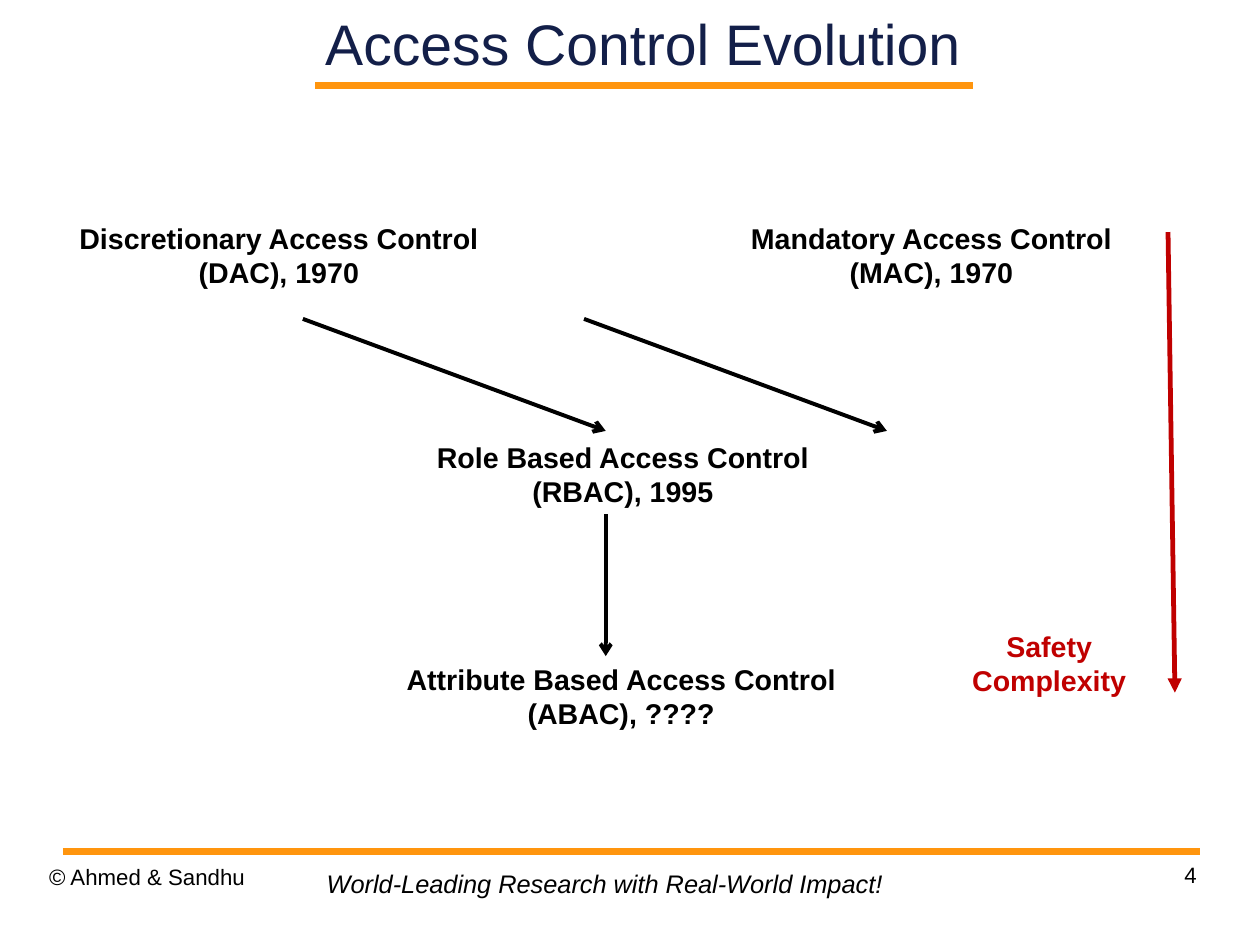
"""Build the slide on the evolution of access control models."""
from lxml.etree import SubElement
from pptx import Presentation
from pptx.dml.color import RGBColor
from pptx.enum.shapes import MSO_CONNECTOR as Connector
from pptx.enum.text import MSO_ANCHOR as Anchor, PP_ALIGN as Align
from pptx.oxml.ns import qn
from pptx.util import Inches, Pt

BLACK, NAVY, ORANGE, RED = "000000", "131F49", "FF950E", "C00000"


def write(box, text, size, color, align, margins=(0, 0), wrap=True, bold=False, italic=False):
    frame = box.text_frame
    frame.text = text
    frame.word_wrap = wrap
    frame.margin_left = frame.margin_right = Inches(margins[0])
    frame.margin_top = frame.margin_bottom = Inches(margins[1])
    for para in frame.paragraphs:
        para.alignment = align
        for span in para.runs:
            span.font.name = "Arial"
            span.font.size = Pt(size)
            span.font.bold = bold
            span.font.italic = italic
            span.font.color.rgb = RGBColor.from_string(color)


def draw_line(start, end, color, width, head=None):
    line = page.shapes.add_connector(Connector.STRAIGHT, *map(Inches, start + end))
    line.line.color.rgb = RGBColor.from_string(color)
    line.line.width = Pt(width)
    if head:
        SubElement(line.line._get_or_add_ln(), qn("a:tailEnd"), type=head)
    SubElement(line._element.spPr, qn("a:effectLst"))


deck = Presentation()
deck.slide_width, deck.slide_height = Pt(793.75), Pt(595.25)
page = deck.slides.add_slide(deck.slide_layouts[5])

title = page.shapes.title
title.left, title.top, title.width, title.height = map(Inches, (2.41, 0, 6.43, 0.75))
write(title, "Access Control Evolution", 36, NAVY, Align.CENTER)
title.text_frame.vertical_anchor = Anchor.MIDDLE

draw_line((2.76, 0.75), (8.51, 0.75), ORANGE, 4.31)
draw_line((0.55, 7.45), (10.5, 7.45), ORANGE, 4.31)

models = [
    ("Discretionary Access Control (DAC), 1970", 0.59, 1.88, 3.7),
    ("Mandatory Access Control (MAC), 1970", 6.3, 1.88, 3.7),
    ("Role Based Access Control (RBAC), 1995", 3.6, 3.8, 3.7),
    ("Attribute Based Access Control (ABAC), ????", 3.38, 5.74, 4.11),
]
for name, left, top, width in models:
    box = page.shapes.add_textbox(*map(Inches, (left, top, width, 0.71)))
    write(box, name, 18, BLACK, Align.CENTER, (0.1, 0.05), bold=True)

for start, end in [((2.65, 2.79), (5.3, 3.77)), ((5.11, 2.79), (7.76, 3.77)), ((5.3, 4.5), (5.3, 5.74))]:
    draw_line(start, end, BLACK, 2.5, "arrow")

draw_line((10.22, 2.03), (10.28, 6.06), RED, 3, "triangle")
trend = page.shapes.add_textbox(*map(Inches, (8.4, 5.45, 1.56, 0.71)))
write(trend, "Safety\nComplexity", 18, RED, Align.CENTER, (0.1, 0.05), wrap=False, bold=True)

for text, left, top, align in [
    ("© Ahmed & Sandhu", 0.43, 7.55, Align.LEFT),
    ("4", 7.9, 7.53, Align.RIGHT),
]:
    box = page.shapes.add_textbox(*map(Inches, (left, top, 2.57, 0.57)))
    write(box, text, 14, BLACK, align)
    box.text_frame.paragraphs[0].line_spacing = 1.01

motto = page.shapes.add_textbox(*map(Inches, (2.76, 7.55, 5.08, 0.37)))
write(motto, "World-Leading Research with Real-World Impact!", 16, BLACK, Align.LEFT,
      (0.1, 0.05), wrap=False, italic=True)

deck.save("out.pptx")
